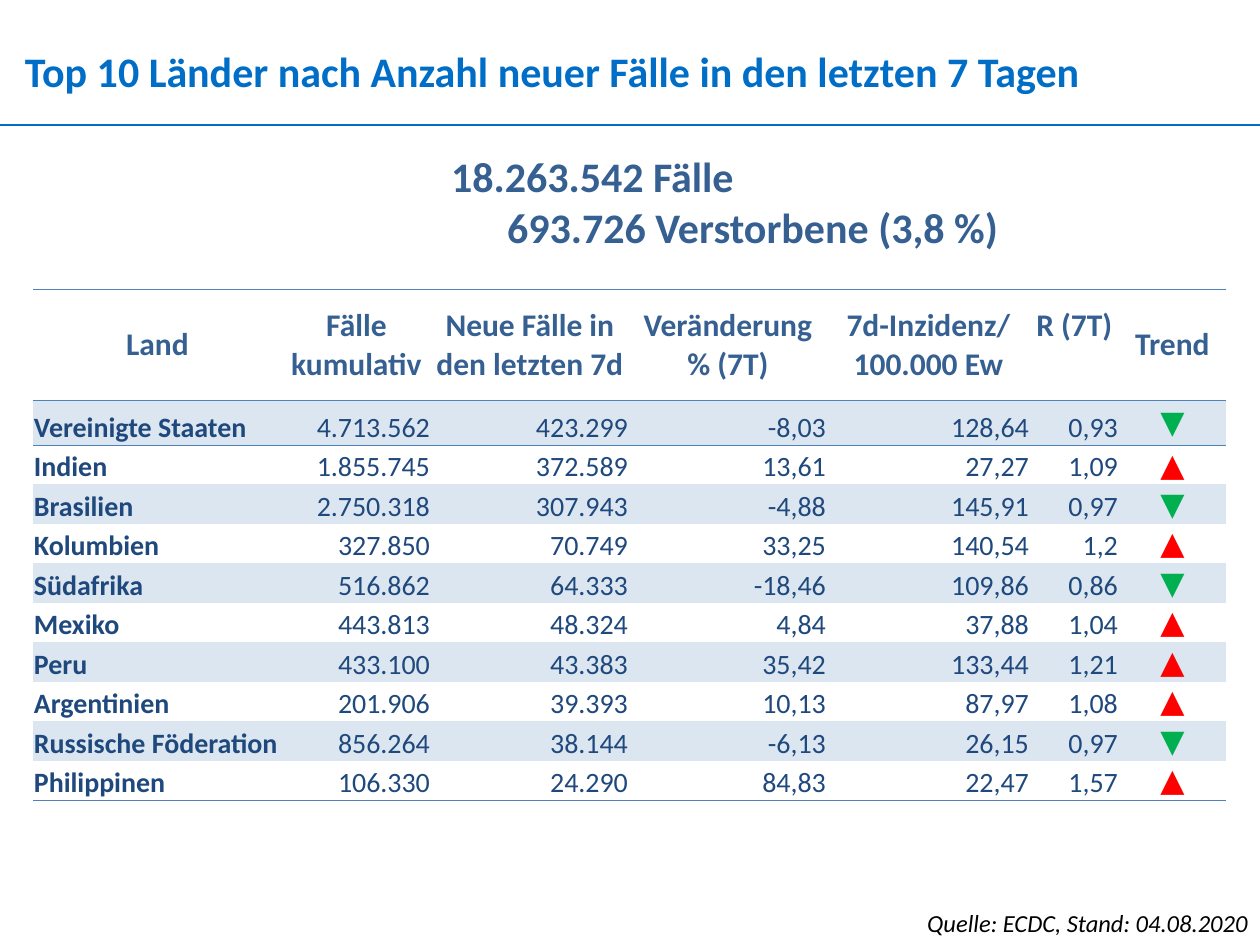
from lxml import etree
from pptx import Presentation
from pptx import util as u
from pptx.dml.color import RGBColor
from pptx.enum import shapes, text
from pptx.oxml.ns import qn

PX = u.Inches(1) // 126
FONT = "Calibri"
TITLE_BLUE, HEADER_BLUE, BODY_BLUE = "006EC7", "366092", "1F497D"
BORDER_BLUE, BAND = "4F81BD", "DCE6F1"
FALLING, RISING = "00B050", "FF0000"
LEFT, CENTER, RIGHT = text.PP_ALIGN.LEFT, text.PP_ALIGN.CENTER, text.PP_ALIGN.RIGHT
MIDDLE, BOTTOM = text.MSO_ANCHOR.MIDDLE, text.MSO_ANCHOR.BOTTOM
NO_STYLE = "{2D5ABB26-0587-4C30-8999-92F81FD0307C}"

COLUMN_WIDTHS = [249, 149, 198, 198, 203, 89, 107]
HEADER_HEIGHT, FIRST_HEIGHT, ROW_HEIGHT = 111, 45, 39
HEADERS = ["Land", "Fälle kumulativ", "Neue Fälle in den letzten 7d",
           "Veränderung % (7T)", "7d-Inzidenz/ 100.000 Ew", "R (7T)", "Trend"]
COUNTRIES = [
    ["Vereinigte Staaten", "4.713.562", "423.299", "-8,03", "128,64", "0,93"],
    ["Indien", "1.855.745", "372.589", "13,61", "27,27", "1,09"],
    ["Brasilien", "2.750.318", "307.943", "-4,88", "145,91", "0,97"],
    ["Kolumbien", "327.850", "70.749", "33,25", "140,54", "1,2"],
    ["Südafrika", "516.862", "64.333", "-18,46", "109,86", "0,86"],
    ["Mexiko", "443.813", "48.324", "4,84", "37,88", "1,04"],
    ["Peru", "433.100", "43.383", "35,42", "133,44", "1,21"],
    ["Argentinien", "201.906", "39.393", "10,13", "87,97", "1,08"],
    ["Russische Föderation", "856.264", "38.144", "-6,13", "26,15", "0,97"],
    ["Philippinen", "106.330", "24.290", "84,83", "22,47", "1,57"],
]


def px(length):
    return u.Emu(length * PX)


def rgb(color):
    return RGBColor.from_string(color)


def format_text(frame, size, color, align=LEFT, bold=False, italic=False):
    for paragraph in frame.paragraphs:
        paragraph.alignment = align
        for run in paragraph.runs:
            font = run.font
            font.name, font.size = FONT, u.Pt(size)
            font.bold, font.italic = bold, italic
            font.color.rgb = rgb(color)


def add_label(slide, box, wording, size, color, margins=(12, 6), **style):
    frame = slide.shapes.add_textbox(*map(px, box)).text_frame
    frame.word_wrap = True
    frame.margin_left = frame.margin_right = px(margins[0])
    frame.margin_top = frame.margin_bottom = px(margins[1])
    frame.text = wording
    format_text(frame, size, color, **style)
    return frame


def add_rule(slide, y, width):
    rule = slide.shapes.add_connector(
        shapes.MSO_CONNECTOR.STRAIGHT, 0, px(y), px(width), px(y))
    rule.line.color.rgb = rgb(TITLE_BLUE)
    rule.line.width = u.Pt(1.5)
    etree.SubElement(rule.element.spPr, qn("a:effectLst"))


def add_border(cell, edge):
    """Draw a thin border; edge is lnT or lnB."""
    line = etree.SubElement(cell._tc.get_or_add_tcPr(), qn(f"a:{edge}"),
                            w=str(u.Pt(0.5)))
    fill = etree.SubElement(line, qn("a:solidFill"))
    etree.SubElement(fill, qn("a:srgbClr"), val=BORDER_BLUE)


def fill_cell(cell, wording, size, color, align, anchor, bold=False,
              band=False, edges=()):
    cell.text = wording
    format_text(cell.text_frame, size, color, align, bold)
    cell.vertical_anchor = anchor
    cell.margin_left = cell.margin_right = cell.margin_top = px(1)
    cell.margin_bottom = 0
    for edge in edges:
        add_border(cell, edge)
    if band:
        cell.fill.solid()
        cell.fill.fore_color.rgb = rgb(BAND)
    else:
        cell.fill.background()


def fill_country(table, row, values):
    shared = {"band": row % 2 == 1, "edges": []}
    if row == 1:
        shared["edges"].append("lnT")
    if row == len(COUNTRIES):
        shared["edges"].append("lnB")
    for column, value in enumerate(values):
        is_name = column == 0
        fill_cell(table.cell(row, column), value, 16, BODY_BLUE,
                  LEFT if is_name else RIGHT, BOTTOM, bold=is_name, **shared)
    change = values[3]
    arrow, color = ("▼", FALLING) if change.startswith("-") else ("▲", RISING)
    fill_cell(table.cell(row, len(values)), arrow, 18, color, CENTER, MIDDLE, **shared)


def add_country_table(slide, left, top):
    heights = [HEADER_HEIGHT, FIRST_HEIGHT] + [ROW_HEIGHT] * (len(COUNTRIES) - 1)
    table = slide.shapes.add_table(
        len(heights), len(COLUMN_WIDTHS), px(left), px(top),
        px(sum(COLUMN_WIDTHS)), px(sum(heights))).table
    table.first_row = table.horz_banding = False
    table._tbl.tblPr.find(qn("a:tableStyleId")).text = NO_STYLE
    for column, width in zip(table.columns, COLUMN_WIDTHS):
        column.width = px(width)
    for row, height in zip(table.rows, heights):
        row.height = px(height)
    for column, header in enumerate(HEADERS):
        fill_cell(table.cell(0, column), header, 18, HEADER_BLUE, CENTER, MIDDLE,
                  bold=True, edges=("lnT", "lnB"))
    # Lift the reproduction number to the first line of its two-line neighbours.
    table.cell(0, HEADERS.index("R (7T)")).margin_bottom = px(39)
    for row, values in enumerate(COUNTRIES, start=1):
        fill_country(table, row, values)


def main():
    deck = Presentation()
    deck.slide_width, deck.slide_height = px(1260), px(945)
    slide = deck.slides.add_slide(deck.slide_layouts[6])
    add_country_table(slide, 33, 289)
    add_label(slide, (25, 46, 1213, 50),
              "Top 10 Länder nach Anzahl neuer Fälle in den letzten 7 Tagen",
              24, TITLE_BLUE, margins=(0, 0), bold=True)
    add_rule(slide, 125, 1260)
    totals = add_label(slide, (439, 145, 600, 114),
                       "18.263.542 Fälle\n693.726 Verstorbene (3,8 %)",
                       24, HEADER_BLUE, bold=True)
    totals.paragraphs[1]._p.get_or_add_pPr().set("marL", str(px(56)))
    add_label(slide, (814, 902, 446, 43), "Quelle: ECDC, Stand: 04.08.2020",
              14, "000000", align=RIGHT, italic=True)
    deck.save("out.pptx")


if __name__ == "__main__":
    main()
